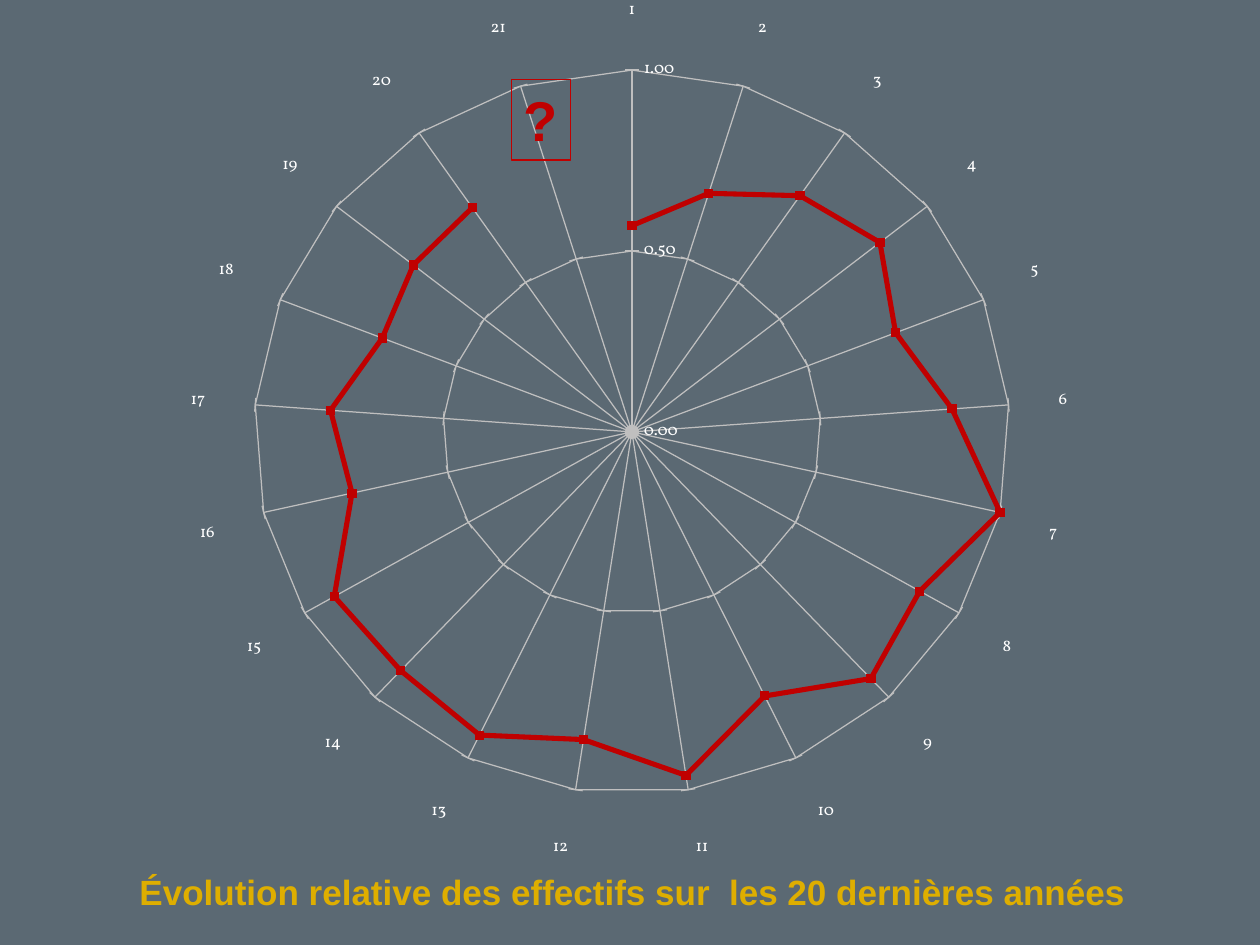
from dataclasses import dataclass

from lxml.etree import SubElement
from pptx import Presentation
from pptx.chart.data import CategoryChartData
from pptx.dml.color import RGBColor
from pptx.enum.chart import XL_CHART_TYPE as ChartType
from pptx.enum.chart import XL_MARKER_STYLE as MarkerStyle
from pptx.enum.chart import XL_TICK_MARK as TickMark
from pptx.enum.text import MSO_AUTO_SIZE as AutoSize
from pptx.enum.text import PP_ALIGN as Align
from pptx.oxml.ns import qn
from pptx.util import Inches, Pt


@dataclass(frozen=True)
class Theme:
    background: RGBColor = RGBColor(0x5B, 0x69, 0x73)
    title: RGBColor = RGBColor(0xDE, 0xAE, 0x00)
    accent: RGBColor = RGBColor(0xC0, 0x00, 0x00)
    label: RGBColor = RGBColor(0xFF, 0xFF, 0xFF)
    grid: RGBColor = RGBColor(0xBF, 0xBF, 0xBF)
    text_font: str = "Arial"
    chart_font: str = "Vollkorn"
    title_size: int = 20
    question_size: int = 32
    label_size: int = 10


@dataclass(frozen=True)
class Area:
    left: float
    top: float
    width: float
    height: float

    def lengths(self) -> tuple:
        return tuple(Inches(n) for n in (self.left, self.top, self.width, self.height))


THEME = Theme()
HEADCOUNTS = (0.57, 0.69, 0.79, 0.84, 0.75, 0.85, 1, 0.88, 0.93, 0.81, 0.96,
              0.86, 0.93, 0.9, 0.91, 0.76, 0.8, 0.71, 0.74, 0.75, None)


def add_text(page, area: Area, text: str, *, size: int, color: RGBColor,
             align=Align.LEFT, wrap: bool = True):
    box = page.shapes.add_textbox(*area.lengths())
    frame = box.text_frame
    frame.word_wrap = wrap
    frame.auto_size = AutoSize.SHAPE_TO_FIT_TEXT
    para = frame.paragraphs[0]
    para.alignment = align
    span = para.add_run()
    span.text = text
    span.font.name = THEME.text_font
    span.font.size = Pt(size)
    span.font.bold = True
    span.font.color.rgb = color
    return box


def set_line(line, color: RGBColor, width: float) -> None:
    line.color.rgb = color
    line.width = Pt(width)


def set_plot_layout(chart, area: Area) -> None:
    plot_area = chart.plots[0]._element.getparent()
    layout = plot_area.find(qn("c:layout"))
    if layout is None:
        layout = SubElement(plot_area, qn("c:layout"))
        plot_area.insert(0, layout)
    manual = SubElement(layout, qn("c:manualLayout"))
    settings = (("layoutTarget", "inner"), ("xMode", "edge"), ("yMode", "edge"),
                ("x", area.left), ("y", area.top), ("w", area.width), ("h", area.height))
    for name, value in settings:
        SubElement(manual, qn(f"c:{name}")).set("val", str(value))


def add_radar(page, area: Area, plot_area: Area) -> None:
    data = CategoryChartData(number_format="0.00")
    data.categories = [str(year) for year in range(1, len(HEADCOUNTS) + 1)]
    data.add_series("Series 1", HEADCOUNTS)
    chart = page.shapes.add_chart(ChartType.RADAR_MARKERS, *area.lengths(), data).chart
    chart.has_legend = False
    chart.has_title = False
    chart.font.name = THEME.chart_font
    chart.font.size = Pt(THEME.label_size)
    chart.font.color.rgb = THEME.label
    set_plot_layout(chart, plot_area)

    years, shares = chart.category_axis, chart.value_axis
    for axis, tick in ((years, TickMark.OUTSIDE), (shares, TickMark.CROSS)):
        axis.has_major_gridlines = True
        axis.major_tick_mark = tick
        axis.minor_tick_mark = TickMark.NONE
        set_line(axis.major_gridlines.format.line, THEME.grid, 0.75)
        set_line(axis.format.line, THEME.grid, 0.75)
    shares.minimum_scale, shares.maximum_scale, shares.major_unit = 0, 1, 0.5
    shares.tick_labels.number_format = "0.00"
    shares.tick_labels.number_format_is_linked = False

    plot = chart.plots[0]
    plot.vary_by_categories = False
    series = plot.series[0]
    series.smooth = False
    set_line(series.format.line, THEME.accent, 3)
    marker = series.marker
    marker.style = MarkerStyle.SQUARE
    marker.size = 5
    marker.format.fill.solid()
    marker.format.fill.fore_color.rgb = THEME.accent
    set_line(marker.format.line, THEME.accent, 0.75)


def main() -> None:
    deck = Presentation()
    deck.slide_width, deck.slide_height = Inches(10), Inches(7.5)
    page = deck.slides.add_slide(deck.slide_layouts[6])
    page.background.fill.solid()
    page.background.fill.fore_color.rgb = THEME.background

    add_text(page, Area(0.98, 6.86, 8.16, 0.44),
             "Évolution relative des effectifs sur  les 20 dernières années ",
             size=THEME.title_size, color=THEME.title, align=Align.CENTER, wrap=False)
    add_radar(page, Area(1.46, 0, 7.01, 6.82), Area(0.08, 0.05, 0.89, 0.91))
    question = add_text(page, Area(4.06, 0.63, 0.47, 0.64), "?",
                        size=THEME.question_size, color=THEME.accent)
    set_line(question.line, THEME.accent, 0.75)
    deck.save("out.pptx")


if __name__ == "__main__":
    main()
